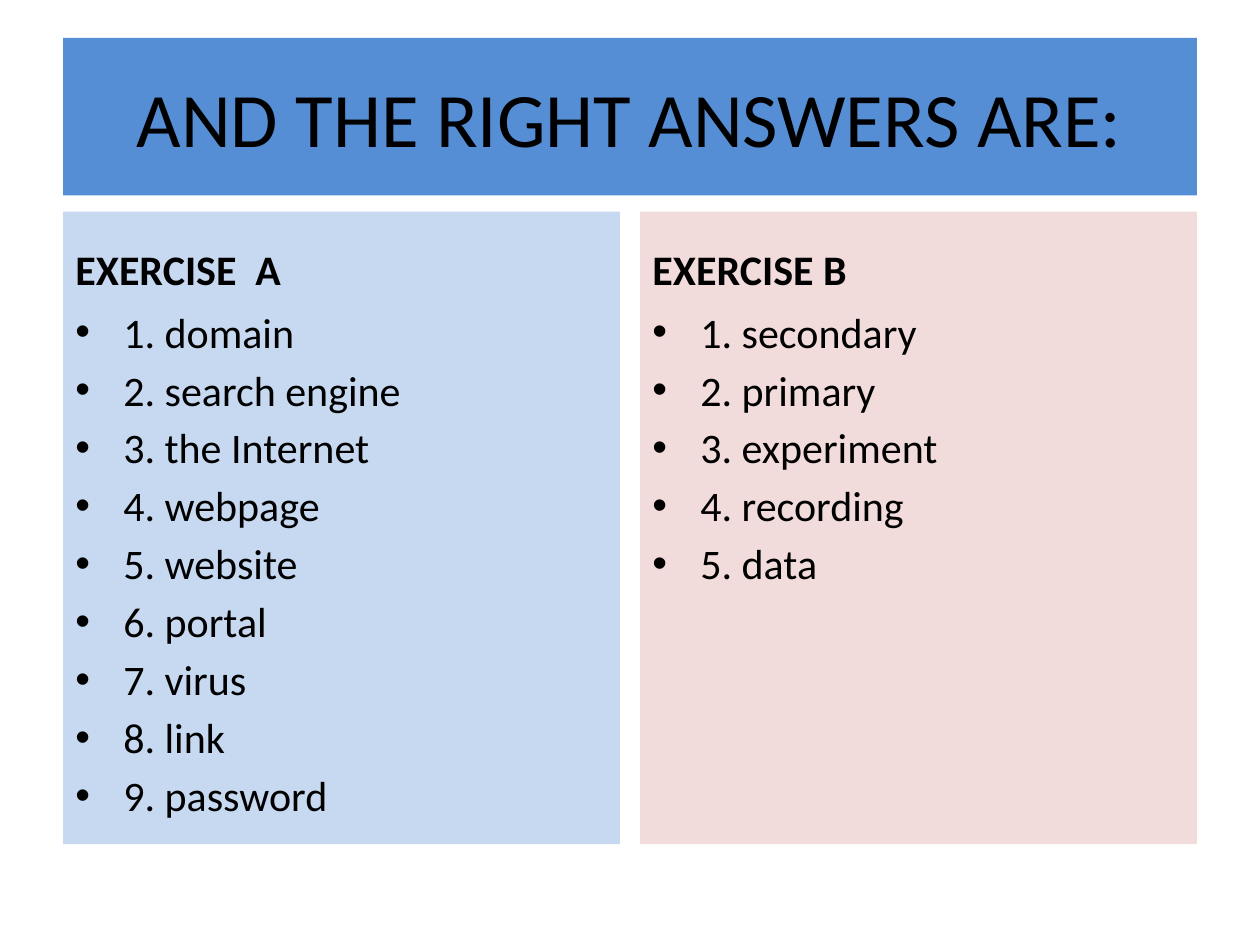
from dataclasses import dataclass

from lxml.etree import SubElement
from pptx import Presentation
from pptx.dml.color import RGBColor as RGB
from pptx.enum.text import MSO_ANCHOR as Anchor, PP_ALIGN as Align
from pptx.oxml.ns import qn
from pptx.util import Inches, Pt


@dataclass(frozen=True)
class Theme:
    font: str = "Calibri"
    ink: str = "000000"
    band: str = "558ED5"
    blue: str = "C6D9F1"
    pink: str = "F2DCDB"
    title: float = 44
    body: float = 24
    gap: float = 4.3
    indent: float = 0.38


THEME = Theme()
WIDE, HIGH = 10, 7.5
EDGE, GUTTER = 0.5, 0.16
TOP, BASE = 1.68, 6.7
HEAD = 0.7

PANELS = [
    ("EXERCISE  A", THEME.blue,
     ["domain", "search engine", "the Internet", "webpage", "website",
      "portal", "virus", "link", "password"]),
    ("EXERCISE B", THEME.pink,
     ["secondary", "primary", "experiment", "recording", "data"]),
]


def place(shape, box):
    shape.left, shape.top, shape.width, shape.height = map(Inches, box)


def paint(shape, color):
    shape.fill.solid()
    shape.fill.fore_color.rgb = RGB.from_string(color)


def style(para, size, bold=False):
    font = para.font
    font.name, font.size, font.bold = THEME.font, Pt(size), bold
    font.color.rgb = RGB.from_string(THEME.ink)


def bullet(para):
    props = para._p.get_or_add_pPr()
    step = Inches(THEME.indent)
    props.set("marL", str(step))
    props.set("indent", str(-step))
    SubElement(props, qn("a:buFont"), typeface="Arial")
    SubElement(props, qn("a:buChar"), char="•")


def add_title(slide, box, text):
    title = slide.shapes.title
    place(title, box)
    paint(title, THEME.band)
    frame = title.text_frame
    frame.text = text
    frame.vertical_anchor = Anchor.MIDDLE
    para = frame.paragraphs[0]
    para.alignment = Align.CENTER
    style(para, THEME.title)


def add_block(slide, box, color, lines, anchor, head=False):
    block = slide.shapes.add_textbox(*map(Inches, box))
    paint(block, color)
    frame = block.text_frame
    frame.word_wrap = True
    frame.vertical_anchor = anchor
    frame.text = "\n".join(lines)
    for para in frame.paragraphs:
        para.space_before = Pt(THEME.gap)
        style(para, THEME.body, head)
        if not head:
            bullet(para)


def add_panel(slide, box, head, color, words):
    left, top, width, height = box
    # Heading strip
    add_block(slide, (left, top, width, HEAD), color, [head],
              Anchor.BOTTOM, head=True)
    # Numbered answers
    lines = [f"{num}. {word}" for num, word in enumerate(words, 1)]
    add_block(slide, (left, top + HEAD, width, height - HEAD), color, lines,
              Anchor.TOP)


def main():
    deck = Presentation()
    deck.slide_width, deck.slide_height = Inches(WIDE), Inches(HIGH)
    slide = deck.slides.add_slide(deck.slide_layouts[5])

    # Title band
    span = WIDE - 2 * EDGE
    add_title(slide, (EDGE, 0.3, span, 1.25), "AND THE RIGHT ANSWERS ARE:")

    # Equal answer columns
    width = (span - GUTTER) / len(PANELS)
    for col, panel in enumerate(PANELS):
        left = EDGE + col * (width + GUTTER)
        add_panel(slide, (left, TOP, width, BASE - TOP), *panel)

    deck.save("out.pptx")


if __name__ == "__main__":
    main()
